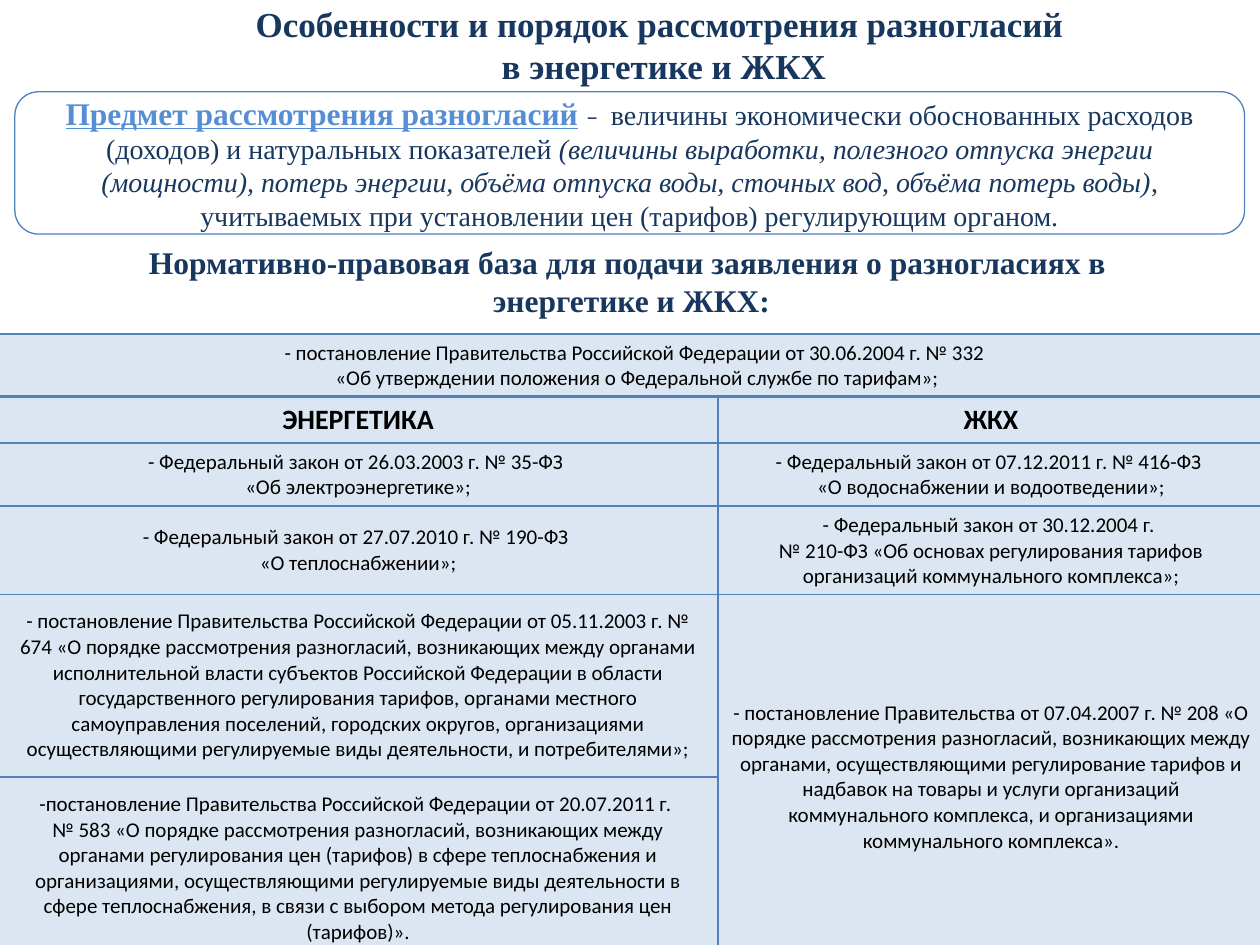
"""Build a slide on how tariff disagreements in energy and utilities are reviewed."""
from lxml.etree import SubElement
from pptx import Presentation
from pptx.dml.color import RGBColor as Rgb
from pptx.enum.shapes import MSO_SHAPE as Shape
from pptx.enum.text import MSO_ANCHOR as Anchor, PP_ALIGN as Align
from pptx.oxml.ns import qn
from pptx.util import Cm, Pt

COLORS = {"navy": "17375E", "sky": "558ED5", "line": "4F81BD",
          "cell": "DCE6F2", "white": "FFFFFF", "black": "000000"}
SERIF, SANS = "Times New Roman", "Calibri"
INDENT = Cm(0.23)

TITLE = "Особенности и порядок рассмотрения разногласий \nв энергетике и ЖКХ"
SUBTITLE = "Нормативно-правовая база для подачи заявления о разногласиях в \nэнергетике и ЖКХ:"

TERM = {"size": 18, "color": "sky", "bold": True}
BODY = {"size": 16, "color": "navy"}
SUBJECT = [
    ("Предмет рассмотрения разногласий", {**TERM, "underline": True}),
    (" ", TERM),
    ("– ", {"size": 14, "color": "navy", "font": SANS}),
    (" величины экономически обоснованных расходов (доходов) и натуральных показателей ", BODY),
    ("(величины выработки, полезного отпуска энергии (мощности), потерь энергии, "
     "объёма отпуска воды, сточных вод, объёма потерь воды)", {**BODY, "italic": True}),
    (", учитываемых при установлении цен (тарифов) регулирующим органом.", BODY),
]

COLUMN_WIDTHS = [14.5, 11.02]
ROW_HEIGHTS = [1.19, 0.89, 1.22, 1.7, 3.68, 3.68]
HEADER_ROW = 1
LAWS = [
    ("- постановление Правительства Российской Федерации от 30.06.2004 г. № 332 \n"
     "«Об утверждении положения о Федеральной службе по тарифам»;", None),
    ("ЭНЕРГЕТИКА", "ЖКХ"),
    ("- Федеральный закон от 26.03.2003 г. № 35-ФЗ \n«Об электроэнергетике»;",
     "- Федеральный закон от 07.12.2011 г. № 416-ФЗ \n«О водоснабжении и водоотведении»;"),
    ("- Федеральный закон от 27.07.2010 г. № 190-ФЗ \n«О теплоснабжении»;",
     "- Федеральный закон от 30.12.2004 г. \n№ 210-ФЗ «Об основах регулирования тарифов "
     "организаций коммунального комплекса»;"),
    ("- постановление Правительства Российской Федерации от 05.11.2003 г. № 674 «О порядке "
     "рассмотрения разногласий, возникающих между органами исполнительной власти субъектов "
     "Российской Федерации в области государственного регулирования тарифов, органами местного "
     "самоуправления поселений, городских округов, организациями осуществляющими регулируемые "
     "виды деятельности, и потребителями»;",
     "- постановление Правительства от 07.04.2007 г. № 208 «О порядке рассмотрения разногласий, "
     "возникающих между органами, осуществляющими регулирование тарифов и надбавок на товары и "
     "услуги организаций коммунального комплекса, и организациями коммунального комплекса»."),
    ("-постановление Правительства Российской Федерации от 20.07.2011 г. \n№ 583 «О порядке "
     "рассмотрения разногласий, возникающих между органами регулирования цен (тарифов) в сфере "
     "теплоснабжения и организациями, осуществляющими регулируемые виды деятельности в сфере "
     "теплоснабжения, в связи с выбором метода регулирования цен (тарифов)».", None),
]


def rgb(name):
    return Rgb.from_string(COLORS[name])


def add_text(para, text, size, color, font=SERIF, bold=False, italic=False, underline=False):
    para.alignment = Align.CENTER
    for number, line in enumerate(text.split("\n")):
        if number:
            para.add_line_break()
        span = para.add_run()
        span.text = line
        span.font.name, span.font.size = font, Pt(size)
        span.font.bold, span.font.italic, span.font.underline = bold, italic, underline
        span.font.color.rgb = rgb(color)


def indent(para):
    para._p.get_or_add_pPr().set("marL", str(INDENT))


def add_heading(page, place, text, size):
    box = page.shapes.add_textbox(*map(Cm, place))
    box.text_frame.word_wrap = True
    para = box.text_frame.paragraphs[0]
    add_text(para, text, size, "navy", bold=True)
    return para


def add_subject(page):
    box = page.shapes.add_shape(Shape.ROUNDED_RECTANGLE, *map(Cm, (0.3, 1.85, 24.79, 2.87)))
    box.shadow.inherit = False
    box.fill.solid()
    box.fill.fore_color.rgb = rgb("white")
    box.line.color.rgb = rgb("line")
    box.line.width = Pt(0.75)
    box.text_frame.word_wrap = True
    box.text_frame.vertical_anchor = Anchor.MIDDLE
    for text, style in SUBJECT:
        add_text(box.text_frame.paragraphs[0], text, **style)


def set_borders(cell, widths):
    for side, width in widths.items():
        border = SubElement(cell._tc.get_or_add_tcPr(), qn(f"a:ln{side}"), w=str(Pt(width)))
        fill = SubElement(border, qn("a:solidFill"))
        SubElement(fill, qn("a:srgbClr"), val=COLORS["line"])


def add_laws(page):
    frame = page.shapes.add_table(len(ROW_HEIGHTS), len(COLUMN_WIDTHS), Cm(-0.03), Cm(6.73),
                                  Cm(sum(COLUMN_WIDTHS)), Cm(sum(ROW_HEIGHTS)))
    table = frame.table
    table.first_row = table.horz_banding = False
    for column, width in zip(table.columns, COLUMN_WIDTHS):
        column.width = Cm(width)
    for row, height in zip(table.rows, ROW_HEIGHTS):
        row.height = Cm(height)
    for row, texts in enumerate(LAWS):
        for column, text in enumerate(texts):
            cell = table.cell(row, column)
            set_borders(cell, {"L": 1, "R": 1, "T": 2 if row == 1 else 1, "B": 2 if row == 0 else 1})
            cell.fill.solid()
            cell.fill.fore_color.rgb = rgb("cell")
            if row > HEADER_ROW:
                cell.vertical_anchor = Anchor.MIDDLE
            if text:
                header = row == HEADER_ROW
                add_text(cell.text_frame.paragraphs[0], text, 16 if header else 12,
                         "black", SANS, bold=header)
    indent(table.cell(0, 0).text_frame.paragraphs[0])
    table.cell(0, 0).merge(table.cell(0, 1))
    table.cell(4, 1).merge(table.cell(5, 1))


def main():
    deck = Presentation()
    deck.slide_width, deck.slide_height = Cm(25.4), Cm(19.05)
    page = deck.slides.add_slide(deck.slide_layouts[6])
    add_heading(page, (3.68, -0.08, 19.41, 1.96), TITLE, 20)
    add_subject(page)
    add_laws(page)
    indent(add_heading(page, (0.51, 4.78, 24.21, 1.8), SUBTITLE, 18))
    deck.save("out.pptx")


if __name__ == "__main__":
    main()
